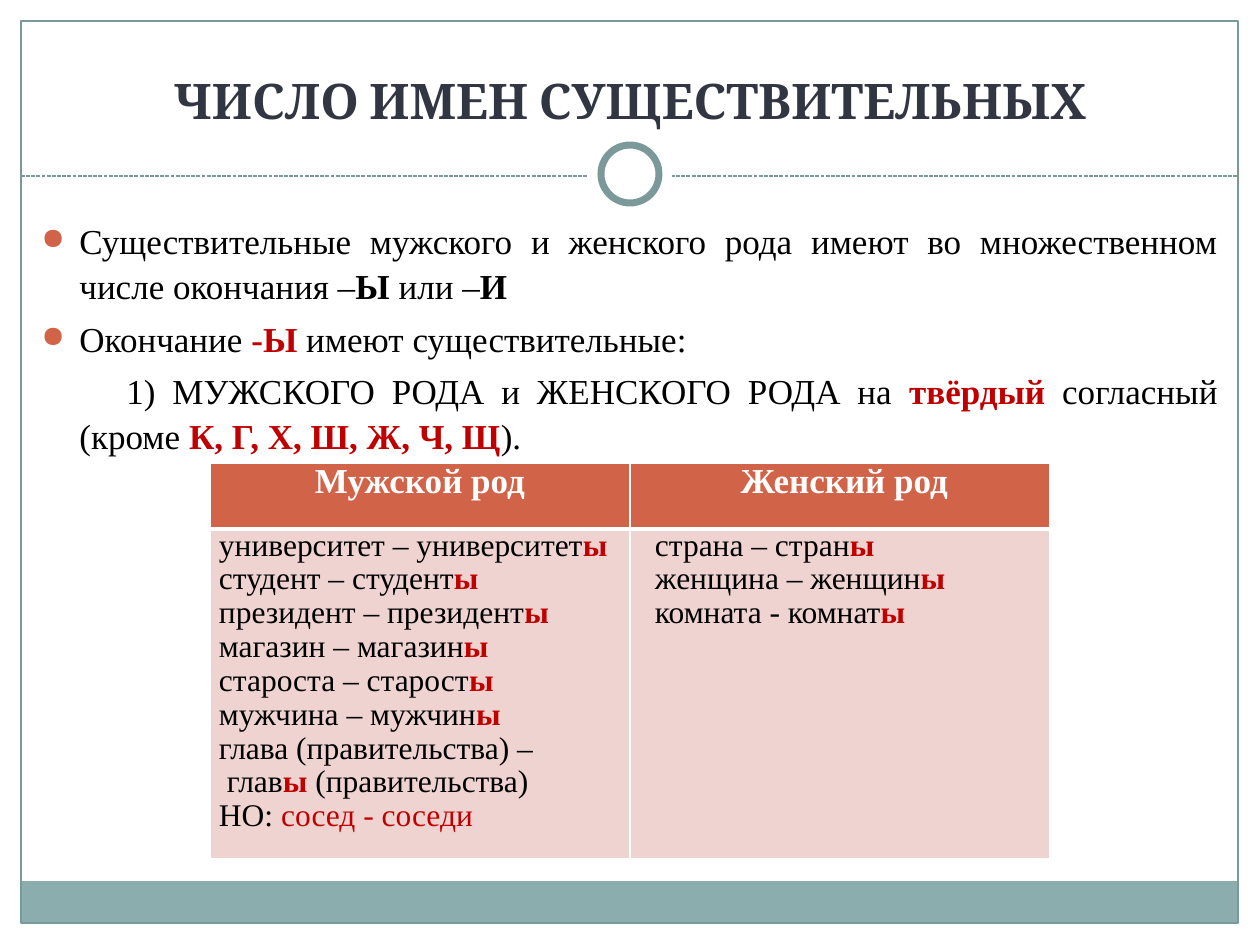
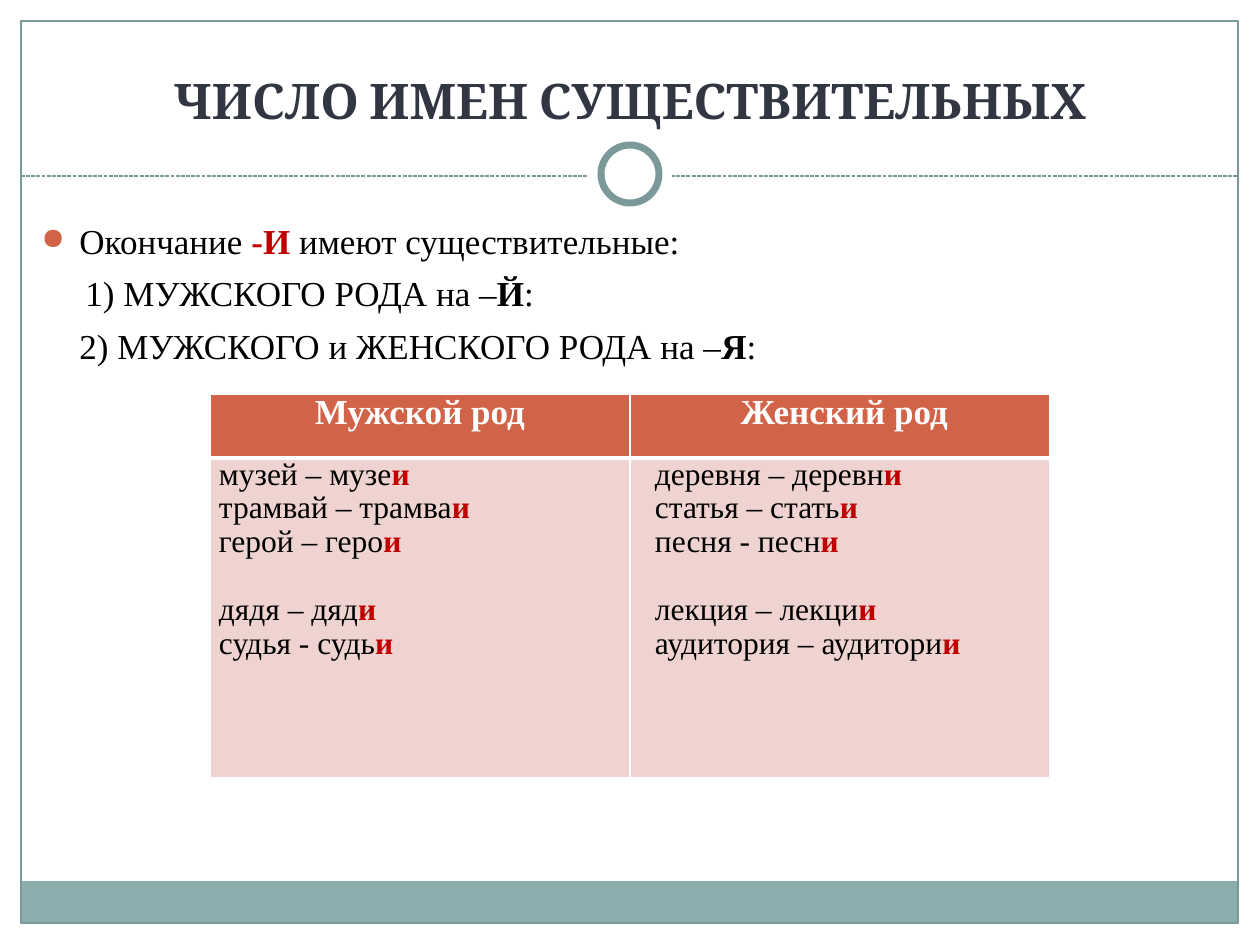
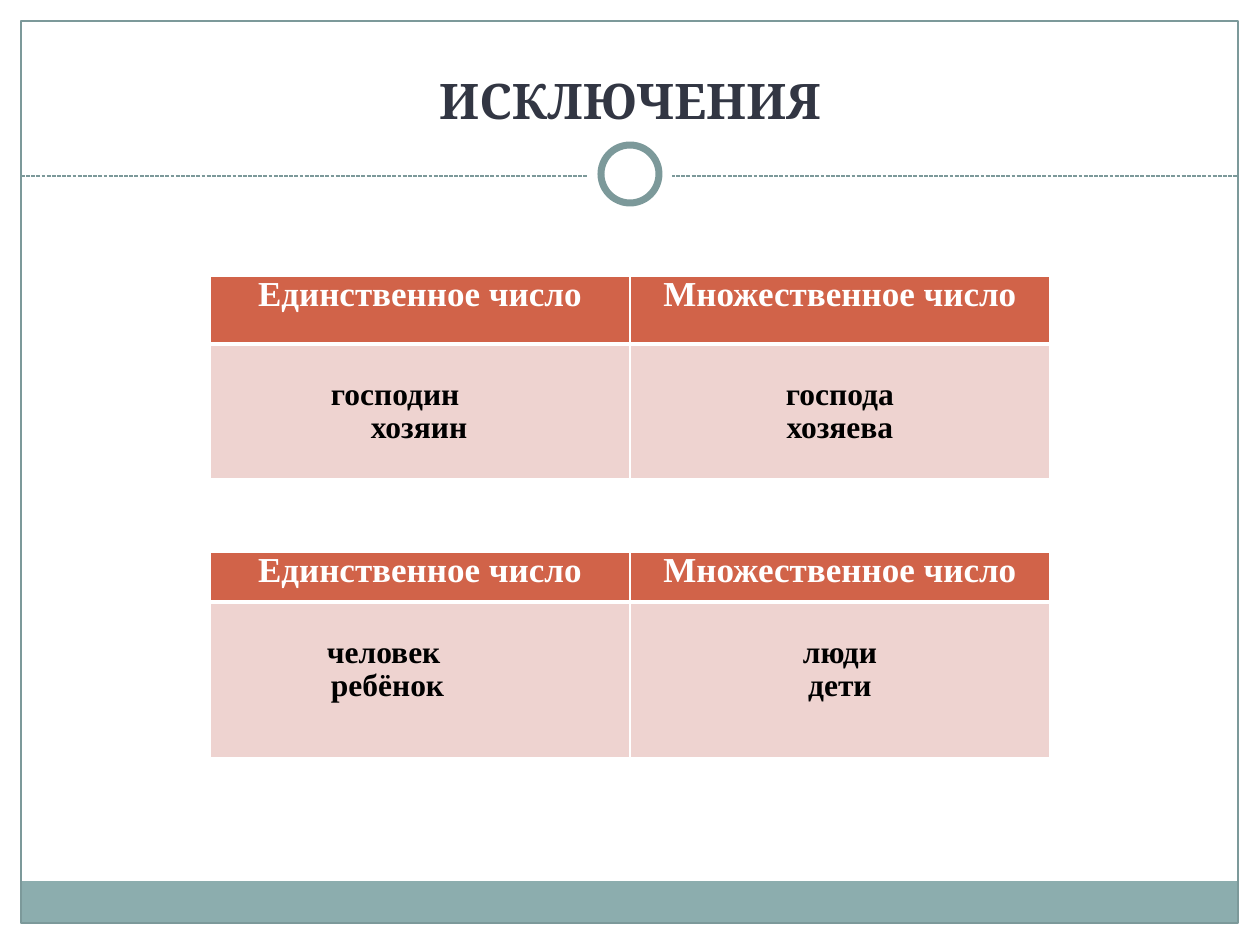
from dataclasses import dataclass
from typing import Any, NamedTuple

from lxml import etree
from pptx import Presentation
from pptx import util as u
from pptx.dml.color import RGBColor
from pptx.enum import dml, shapes, text
from pptx.oxml import ns

SCALE = 914400 / 126
BLACK = RGBColor(0x00, 0x00, 0x00)
WHITE = RGBColor(0xFF, 0xFF, 0xFF)
RED = RGBColor(0xC0, 0x00, 0x00)
ORANGE = RGBColor(0xD1, 0x63, 0x49)
PINK = RGBColor(0xEE, 0xD3, 0xD0)
TEAL = RGBColor(0x8C, 0xAD, 0xAE)
DARK_TEAL = RGBColor(0x7C, 0x99, 0x9A)
NAVY = RGBColor(0x32, 0x36, 0x43)

SERIF = "Times New Roman"
TITLE_FONT = {"name": "Cambria", "size": u.Pt(28), "bold": True}
RULE_FONT = {"name": SERIF, "size": u.Pt(20)}
HEAD_FONT = {"name": SERIF, "size": u.Pt(20)}
WORD_FONT = {"name": SERIF, "size": u.Pt(18)}

HANG = 38
WORD_PITCH = 34
TABLE_LEFT = 210
COLUMN_WIDTH = 420
CELL_INSET = 9
CENTER = text.PP_ALIGN.CENTER
LEFT = text.PP_ALIGN.LEFT
JUSTIFY = text.PP_ALIGN.JUSTIFY


class Place(NamedTuple):
    left: int
    top: int
    width: int
    height: int


class Span(NamedTuple):
    words: str
    color: RGBColor = BLACK
    bold: bool = False


@dataclass(frozen=True)
class Line:
    spans: tuple[Span, ...]
    margin: int = 0
    first: int = 0
    before: int = 0
    align: Any = LEFT
    spacing: float = 0.97
    bullet: bool = False


@dataclass(frozen=True)
class WordTable:
    top: int
    heights: tuple[int, int]
    heads: tuple[str, str]
    columns: tuple[list[Line], list[Line]]
    inset_top: int = 0


@dataclass(frozen=True)
class Page:
    title: str
    rules: list[Line]
    tables: list[WordTable]


class Ornament(NamedTuple):
    kind: Any
    place: Place
    fill: RGBColor | None = None
    line: RGBColor | None = None
    weight: float = 0


BAND = Ornament(shapes.MSO_SHAPE.RECTANGLE, Place(21, 881, 1217, 43), TEAL)
FRAME = Ornament(shapes.MSO_SHAPE.RECTANGLE, Place(21, 21, 1217, 902), None, DARK_TEAL, 0.75)
DISC = Ornament(shapes.MSO_SHAPE.OVAL, Place(588, 132, 84, 84), WHITE)
RING = Ornament(shapes.MSO_SHAPE.OVAL, Place(601, 145, 58, 58), WHITE, DARK_TEAL, 4)


def px(length: float) -> int:
    return round(length * SCALE)


def emu(place: Place) -> list[int]:
    return [px(length) for length in place]


def apply(target: Any, values: dict[str, Any]) -> None:
    for name, value in values.items():
        setattr(target, name, value)


def red(words: str) -> Span:
    return Span(words, RED, True)


def strong(words: str) -> Span:
    return Span(words, bold=True)


def rule(*spans: Span, first: int = 0, before: int = 7, bullet: bool = False) -> Line:
    return Line(spans, HANG, -HANG if bullet else first, before, JUSTIFY, 1.08, bullet)


def forms(stems: list[str], ending: str, margin: int = 0, before: int = 0) -> list[Line]:
    return [Line((Span(stem), red(ending)), margin, before=0 if index else before)
            for index, stem in enumerate(stems)]


def add_bullet(para: Any) -> None:
    properties = para._p.get_or_add_pPr()
    color = etree.SubElement(properties, ns.qn("a:buClr"))
    etree.SubElement(color, ns.qn("a:srgbClr"), val=str(ORANGE))
    etree.SubElement(properties, ns.qn("a:buSzPct"), val="85000")
    etree.SubElement(properties, ns.qn("a:buChar"), char="●")


def write(frame: Any, lines: list[Line], font: dict[str, Any]) -> None:
    for index, line in enumerate(lines):
        para = frame.add_paragraph() if index else frame.paragraphs[0]
        properties = para._p.get_or_add_pPr()
        properties.set("marL", str(px(line.margin)))
        properties.set("indent", str(px(line.first)))
        if line.bullet:
            add_bullet(para)
        apply(para, {"alignment": line.align, "line_spacing": line.spacing,
                     "space_before": u.Pt(line.before / 1.75)})
        for span in line.spans:
            run = para.add_run()
            run.text = span.words
            apply(run.font, {**font, "bold": span.bold})
            run.font.color.rgb = span.color


def add_text(slide: Any, place: Place, lines: list[Line], font: dict[str, Any], anchor: Any) -> None:
    box = slide.shapes.add_textbox(*emu(place))
    apply(box.text_frame, {"word_wrap": True, "vertical_anchor": anchor})
    write(box.text_frame, lines, font)


def add_ornament(slide: Any, ornament: Ornament) -> None:
    shape = slide.shapes.add_shape(ornament.kind, *emu(ornament.place))
    shape.shadow.inherit = False
    if ornament.fill is None:
        shape.fill.background()
    else:
        shape.fill.solid()
        shape.fill.fore_color.rgb = ornament.fill
    if ornament.line is None:
        shape.line.fill.background()
    else:
        shape.line.color.rgb = ornament.line
        shape.line.width = u.Pt(ornament.weight)


def add_divider(slide: Any) -> None:
    divider = slide.shapes.add_connector(
        shapes.MSO_CONNECTOR.STRAIGHT, px(21), px(176), px(1238), px(176))
    divider.line.color.rgb = DARK_TEAL
    apply(divider.line, {"width": u.Pt(0.75), "dash_style": dml.MSO_LINE.SQUARE_DOT})
    etree.SubElement(divider._element.spPr, ns.qn("a:effectLst"))


def style_cell(cell: Any, fill: RGBColor, borders: dict[str, int], inset_top: int) -> None:
    properties = cell._tc.get_or_add_tcPr()
    for side, weight in borders.items():
        edge = etree.SubElement(properties, ns.qn(f"a:ln{side}"), w=str(u.Pt(weight)))
        paint = etree.SubElement(edge, ns.qn("a:solidFill"))
        etree.SubElement(paint, ns.qn("a:srgbClr"), val=str(WHITE))
    cell.fill.solid()
    cell.fill.fore_color.rgb = fill
    apply(cell, {"margin_left": px(CELL_INSET), "margin_right": px(CELL_INSET),
                 "margin_top": px(inset_top), "margin_bottom": 0})


def add_word_table(slide: Any, words: WordTable) -> None:
    place = Place(TABLE_LEFT, words.top, 2 * COLUMN_WIDTH, sum(words.heights))
    table = slide.shapes.add_table(2, 2, *emu(place)).table
    table.horz_banding = False
    for row, height in zip(table.rows, words.heights):
        row.height = px(height)
    for index, (head, lines) in enumerate(zip(words.heads, words.columns)):
        table.columns[index].width = px(COLUMN_WIDTH)
        top, bottom = table.cell(0, index), table.cell(1, index)
        style_cell(top, ORANGE, {"L": 1, "R": 1, "T": 1, "B": 3}, 0)
        style_cell(bottom, PINK, {"L": 1, "R": 1, "T": 3, "B": 1}, words.inset_top)
        write(top.text_frame, [Line((Span(head, WHITE, True),), align=CENTER)], HEAD_FONT)
        write(bottom.text_frame, lines, WORD_FONT)


def add_page(deck: Any, page: Page) -> None:
    slide = deck.slides.add_slide(deck.slide_layouts[6])
    for ornament in (BAND, FRAME):
        add_ornament(slide, ornament)
    add_divider(slide)
    for ornament in (DISC, RING):
        add_ornament(slide, ornament)
    title = Line((Span(page.title, NAVY, True),), align=CENTER, spacing=1.0)
    add_text(slide, Place(42, 31, 1176, 105), [title], TITLE_FONT, text.MSO_ANCHOR.BOTTOM)
    if page.rules:
        add_text(slide, Place(29, 210, 1201, 630), page.rules, RULE_FONT, text.MSO_ANCHOR.TOP)
    for words in page.tables:
        add_word_table(slide, words)


def exceptions(top: int, heights: tuple[int, int], singular: dict[str, int],
               plural: list[str]) -> WordTable:
    return WordTable(
        top, heights, ("Единственное число", "Множественное число"),
        ([Line((strong(word),), margin) for word, margin in singular.items()],
         [Line((strong(word),), align=CENTER) for word in plural]),
        inset_top=WORD_PITCH)


NUMBER_TITLE = "ЧИСЛО ИМЕН СУЩЕСТВИТЕЛЬНЫХ"
GENDERS = ("Мужской род", " Женский род")
FEMININE_MARGIN = 16

HARD_ENDINGS = Page(
    NUMBER_TITLE,
    [rule(Span("Существительные мужского и женского рода имеют во множественном числе окончания –"),
          strong("Ы"), Span(" или –"), strong("И"), before=0, bullet=True),
     rule(Span("Окончание "), red("-Ы "), Span("имеют существительные:"), bullet=True),
     rule(Span("1) МУЖСКОГО РОДА и ЖЕНСКОГО РОДА на "), red("твёрдый"), Span(" согласный (кроме "),
          red("К, Г, Х, Ш, Ж, Ч, Щ"), Span(")."), first=47)],
    [WordTable(
        463, (66, 304), GENDERS,
        (forms(["университет – университет", "студент – студент", "президент – президент",
                "магазин – магазин", "староста – старост", "мужчина – мужчин"], "ы")
         + [Line((Span("глава (правительства) –"),)),
            Line((Span("глав"), red("ы"), Span(" (правительства)")), margin=8),
            Line((Span("НО:"), Span(" сосед - соседи", RED)))],
         forms(["страна – стран", "женщина – женщин", "комната - комнат"], "ы", FEMININE_MARGIN)))])

SOFT_ENDINGS = Page(
    NUMBER_TITLE,
    [rule(Span("Окончание "), red("-И "), Span("имеют существительные:"), before=0, bullet=True),
     rule(Span("1) МУЖСКОГО РОДА на –"), strong("Й"), Span(":"), first=6),
     rule(Span("2) МУЖСКОГО и ЖЕНСКОГО РОДА на –"), strong("Я"), Span(":"))],
    [WordTable(
        394, (64, 320), GENDERS,
        (forms(["музей – музе", "трамвай – трамва", "герой – геро"], "и")
         + forms(["дядя – дяд", "судья - судь"], "и", before=WORD_PITCH),
         forms(["деревня – деревн", "статья – стать", "песня - песн"], "и", FEMININE_MARGIN)
         + forms(["лекция – лекци", "аудитория – аудитори"], "и", FEMININE_MARGIN, WORD_PITCH)))])

EXCEPTIONS = Page(
    "ИСКЛЮЧЕНИЯ", [],
    [exceptions(276, (68, 135), {"господин": 112, "хозяин": 152}, ["господа", "хозяева"]),
     exceptions(552, (50, 156), {"человек": 108, "ребёнок": 112}, ["люди", "дети"])])


def main() -> None:
    deck = Presentation()
    apply(deck, {"slide_width": px(1260), "slide_height": px(945)})
    for page in (HARD_ENDINGS, SOFT_ENDINGS, EXCEPTIONS):
        add_page(deck, page)
    deck.save("out.pptx")


if __name__ == "__main__":
    main()
